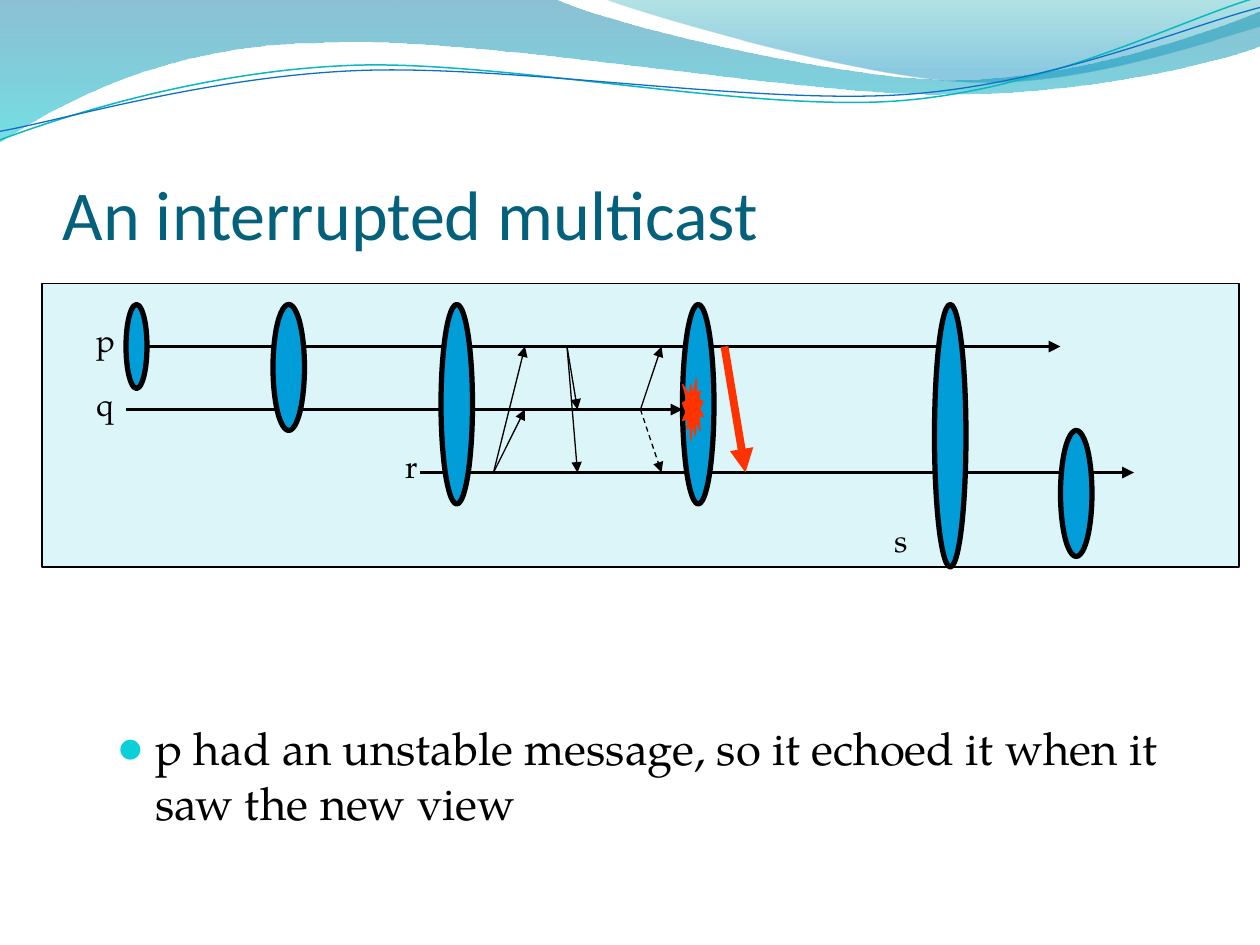
from dataclasses import dataclass
from typing import Any, Optional

from lxml import etree
from pptx import Presentation
from pptx.dml.color import RGBColor
from pptx.enum.dml import MSO_LINE
from pptx.enum.shapes import MSO_CONNECTOR, MSO_SHAPE
from pptx.enum.text import MSO_ANCHOR, MSO_AUTO_SIZE, PP_ALIGN
from pptx.oxml.ns import qn
from pptx.util import Pt

OVAL, BURST, RECTANGLE = MSO_SHAPE.OVAL, MSO_SHAPE.EXPLOSION1, MSO_SHAPE.RECTANGLE
STRAIGHT, DASH = MSO_CONNECTOR.STRAIGHT, MSO_LINE.DASH
LEFT, RIGHT = PP_ALIGN.LEFT, PP_ALIGN.RIGHT
TOP, BOTTOM = MSO_ANCHOR.TOP, MSO_ANCHOR.BOTTOM
GROW, FIXED = MSO_AUTO_SIZE.SHAPE_TO_FIT_TEXT, MSO_AUTO_SIZE.NONE

BLACK = RGBColor(0x00, 0x00, 0x00)
TITLE_TEAL = RGBColor(0x04, 0x61, 0x7B)
PANEL_BLUE = RGBColor(0xDB, 0xF5, 0xF9)
VIEW_BLUE = RGBColor(0x00, 0x9D, 0xD9)
ALERT_RED = RGBColor(0xFF, 0x33, 0x00)
BULLET_CYAN = RGBColor(0x0B, 0xD0, 0xD9)
WAVE_NAVY = RGBColor(0x00, 0x74, 0xA1)
WAVE_AQUA = RGBColor(0x00, 0xC6, 0xCF)
WAVE_GREEN = RGBColor(0x00, 0xA1, 0xA9)
WAVE_SKY = RGBColor(0x00, 0x8B, 0xBF)
LINE_CYAN = RGBColor(0x0A, 0xB8, 0xBF)
LINE_BLUE = RGBColor(0x0F, 0x6F, 0xC6)

HEADING_FONT, BODY_FONT = "Calibri", "TeX Gyre Pagella"
P_ROW, Q_ROW, R_ROW = 198, 234, 270
VIEW_TOP, VIEW_WIDTH = 174, 18
LINE_TILT = 357.3

Point = tuple[float, float]


@dataclass
class Stop:
    color: RGBColor
    position: float
    opacity: int


@dataclass
class Wave:
    start: Point
    segments: list[tuple[Point, ...]]
    stops: tuple[Stop, ...] = ()
    line: Optional[RGBColor] = None
    weight: float = 0.75


@dataclass
class Figure:
    kind: Any
    left: float
    top: float
    width: float
    height: float
    fill: RGBColor = VIEW_BLUE
    line: RGBColor = BLACK
    weight: float = 3


@dataclass
class Arrow:
    start: Point
    end: Point
    weight: float = 0.75
    color: RGBColor = BLACK
    dashed: bool = False


@dataclass
class Label:
    text: str
    left: float
    top: float
    width: float = 24
    height: float = 28.8
    size: float = 18
    font: str = BODY_FONT
    color: RGBColor = BLACK
    align: Any = LEFT
    anchor: Any = TOP
    fit: Any = GROW
    side_inset: float = 7.2
    bottom_inset: float = 3.6


WAVES = [
    Wave((0, -0.72), [
        ((316.8, -0.72),),
        ((342.7, 12.2), (478.1, 45.4), (545.8, 45.4)),
        ((614.2, 45.4), (689.8, 18.7), (720, 6.5)),
        ((720.7, 25.9),),
        ((709.2, 31.7), (626.4, 54.7), (537.1, 54)),
        ((447.8, 54), (275, 20.2), (185, 24.5)),
        ((92.9, 25.2), (33.1, 59.8), (-0.72, 81.4)),
    ], (Stop(WAVE_NAVY, 0, 45), Stop(WAVE_AQUA, 1, 55))),
    Wave((344.9, -0.72), [
        ((366.5, 7.9), (491, 44.6), (553.7, 46.8)),
        ((616.3, 49.7), (691.9, 23), (720, 15.1)),
        ((720, 0),),
    ], (Stop(WAVE_GREEN, 0, 30), Stop(WAVE_SKY, 0.8, 45))),
    Wave((-1.4, 63), [
        ((33.8, 51.7), (114.1, 29.4), (199.8, 29.9)),
        ((284.9, 30.3), (425.8, 67.3), (512.4, 64.9)),
        ((599, 62.4), (676.5, 25.7), (720.2, 15.5)),
    ], line=LINE_CYAN, weight=0.85),
    Wave((-1.1, 58), [
        ((32.9, 53.8), (118.3, 32.5), (204.1, 33)),
        ((290.6, 33.4), (428.9, 63.1), (515.5, 61.4)),
        ((601.3, 59.6), (678.5, 30.1), (721.4, 21.3)),
    ], line=LINE_BLUE),
]
PANEL = Figure(RECTANGLE, 24, 162, 684, 162, PANEL_BLUE, BLACK, 0.75)
TITLE = Label("An interrupted multicast", 36, 55.5, 648, 90, 40, HEADING_FONT,
              TITLE_TEAL, anchor=BOTTOM, fit=FIXED, side_inset=0, bottom_inset=0)
BODY = Label("p had an unstable message, so it echoed it when it saw the new view",
             60, 408, 645, 108, 26, fit=FIXED)
TIMELINES = [
    Arrow((72, P_ROW), (606, P_ROW), 2.25),
    Arrow((72, Q_ROW), (390, Q_ROW), 2.25),
    Arrow((240, R_ROW), (648, R_ROW), 2.25),
]
PROCESSES = [
    Label("p", 48, 180), Label("q", 48, 216.7),
    Label("r", 222, 252, align=RIGHT), Label("s", 504, 294),
]
VIEWS = [
    Figure(OVAL, 72, VIEW_TOP, 12, 48),
    Figure(OVAL, 156, VIEW_TOP, VIEW_WIDTH, 72),
    Figure(OVAL, 252, VIEW_TOP, VIEW_WIDTH, 114),
    Figure(OVAL, 390, VIEW_TOP, VIEW_WIDTH, 114),
    Figure(BURST, 390, 216, 12, 36, ALERT_RED, ALERT_RED, 0.75),
    Figure(OVAL, 534, VIEW_TOP, VIEW_WIDTH, 150),
    Figure(OVAL, 606, 246, VIEW_WIDTH, 72),
]
MESSAGES = [
    Arrow((282, R_ROW), (300, Q_ROW)), Arrow((282, R_ROW), (300, P_ROW)),
    Arrow((324, P_ROW), (330, Q_ROW)), Arrow((324, P_ROW), (330, R_ROW)),
    Arrow((366, Q_ROW), (378, P_ROW)), Arrow((366, Q_ROW), (378, R_ROW), dashed=True),
    Arrow((414, P_ROW), (426, R_ROW), 4.5, ALERT_RED),
]


def apply(target: Any, values: dict[str, Any]) -> None:
    for name, value in values.items():
        setattr(target, name, value)


def add_element(parent: Any, tag: str, **attributes: str) -> Any:
    return etree.SubElement(parent, qn(tag), attributes)


def set_line(line: Any, color: RGBColor, weight: float) -> None:
    line.color.rgb = color
    line.width = Pt(weight)


def bend_segments(shape: Any, segments: list[tuple[Point, ...]]) -> None:
    steps = iter(list(shape._element.iter(qn("a:lnTo"))))
    for segment in segments:
        first, *others = [next(steps) for _ in segment]
        if others:
            first.tag = qn("a:cubicBezTo")
        for step in others:
            first.append(step[0])
            step.getparent().remove(step)


def draw_wave(page: Any, wave: Wave) -> None:
    points = [wave.start, *(point for segment in wave.segments for point in segment)]
    outline = [(Pt(x), Pt(y)) for x, y in points]
    builder = page.shapes.build_freeform(*outline[0])
    builder.add_line_segments(outline[1:], close=bool(wave.stops))
    shape = builder.convert_to_shape()
    bend_segments(shape, wave.segments)
    shape.shadow.inherit = False
    if wave.line is not None:
        shape.rotation = LINE_TILT
        shape.fill.background()
        set_line(shape.line, wave.line, wave.weight)
        return
    shape.line.fill.background()
    shape.fill.gradient()
    shape.fill.gradient_angle = 270
    for target, stop in zip(shape.fill.gradient_stops, wave.stops):
        target.color.rgb = stop.color
        target.position = stop.position
    gradient = shape._element.spPr.find(qn("a:gradFill"))
    for color, stop in zip(gradient.iter(qn("a:srgbClr")), wave.stops):
        add_element(color, "a:alpha", val=str(stop.opacity * 1000))


def draw_figure(page: Any, figure: Figure) -> None:
    shape = page.shapes.add_shape(figure.kind, Pt(figure.left), Pt(figure.top),
                                  Pt(figure.width), Pt(figure.height))
    shape.shadow.inherit = False
    shape.fill.solid()
    shape.fill.fore_color.rgb = figure.fill
    set_line(shape.line, figure.line, figure.weight)


def draw_arrow(page: Any, arrow: Arrow) -> None:
    ends = [Pt(value) for value in (*arrow.start, *arrow.end)]
    connector = page.shapes.add_connector(STRAIGHT, *ends)
    set_line(connector.line, arrow.color, arrow.weight)
    if arrow.dashed:
        connector.line.dash_style = DASH
    add_element(connector.line._get_or_add_ln(), "a:tailEnd", type="triangle")
    add_element(connector._element.spPr, "a:effectLst")


def draw_label(page: Any, label: Label) -> Any:
    box = page.shapes.add_textbox(Pt(label.left), Pt(label.top),
                                  Pt(label.width), Pt(label.height))
    apply(box.text_frame, {
        "word_wrap": True, "auto_size": label.fit, "vertical_anchor": label.anchor,
        "margin_left": Pt(label.side_inset), "margin_right": Pt(label.side_inset),
        "margin_bottom": Pt(label.bottom_inset),
    })
    para = box.text_frame.paragraphs[0]
    para.alignment = label.align
    span = para.add_run()
    span.text = label.text
    apply(span.font, {"name": label.font, "size": Pt(label.size)})
    span.font.color.rgb = label.color
    return para


def add_bullet(para: Any) -> None:
    properties = para._p.get_or_add_pPr()
    apply_indent = {"marL": Pt(21.6), "indent": -Pt(21.6)}
    for name, value in apply_indent.items():
        properties.set(name, str(value))
    add_element(add_element(properties, "a:buClr"), "a:srgbClr", val=str(BULLET_CYAN))
    add_element(properties, "a:buSzPct", val="95000")
    add_element(properties, "a:buFont", typeface=HEADING_FONT)
    add_element(properties, "a:buChar", char="●")


def main() -> None:
    deck = Presentation()
    apply(deck, {"slide_width": Pt(720), "slide_height": Pt(540)})
    page = deck.slides.add_slide(deck.slide_layouts[6])
    for wave in WAVES:
        draw_wave(page, wave)
    draw_figure(page, PANEL)
    draw_label(page, TITLE)
    add_bullet(draw_label(page, BODY))
    for draw, items in ((draw_arrow, TIMELINES), (draw_label, PROCESSES),
                        (draw_figure, VIEWS), (draw_arrow, MESSAGES)):
        for item in items:
            draw(page, item)
    deck.save("out.pptx")


if __name__ == "__main__":
    main()
